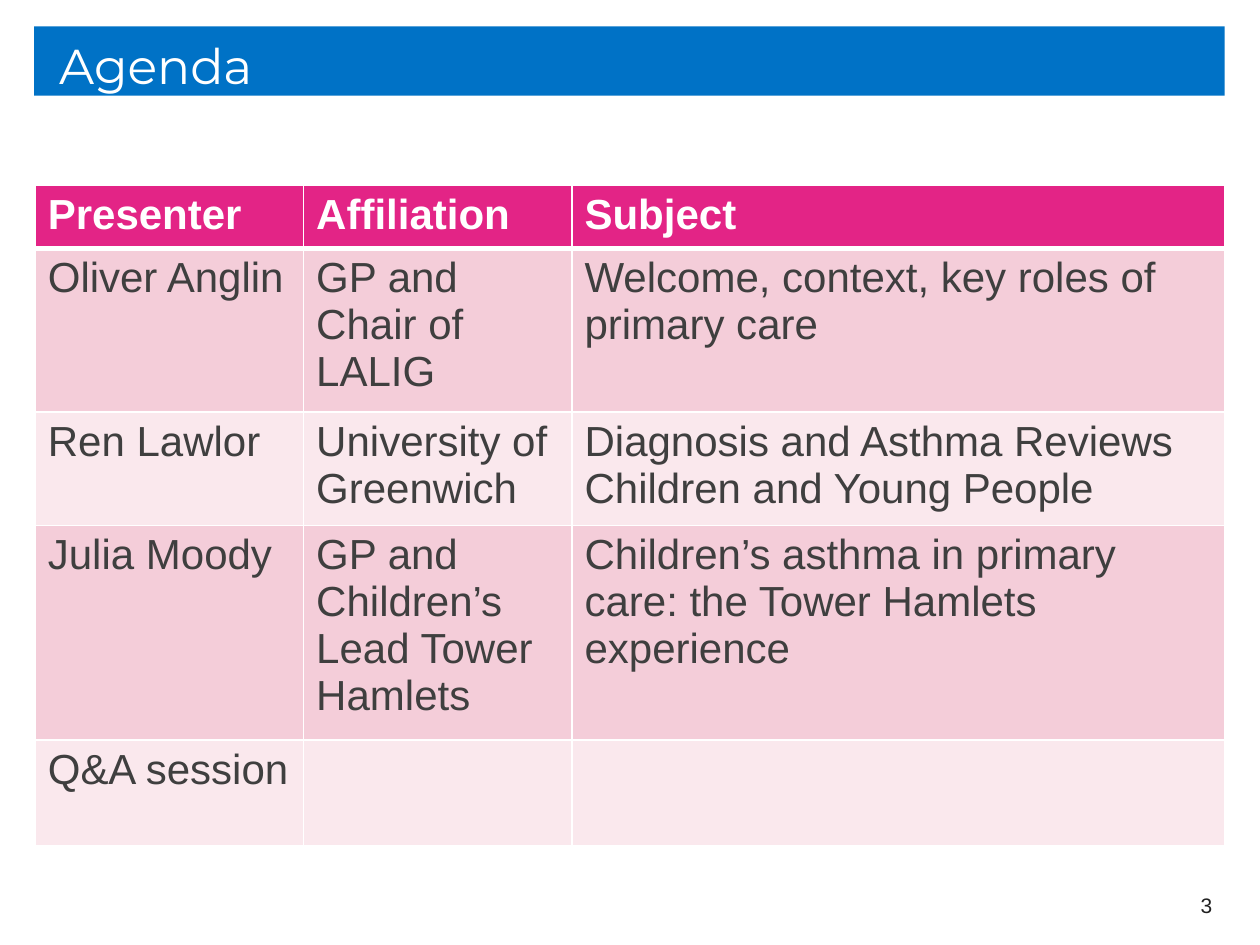
from dataclasses import dataclass

from lxml.etree import SubElement
from pptx import Presentation
from pptx.dml.color import RGBColor
from pptx.enum.shapes import MSO_SHAPE
from pptx.enum.text import MSO_ANCHOR, PP_ALIGN
from pptx.oxml.ns import qn
from pptx.util import Inches, Pt

WHITE = RGBColor(0xFF, 0xFF, 0xFF)
BLUE = RGBColor(0x00, 0x72, 0xC6)
MAGENTA = RGBColor(0xE3, 0x24, 0x86)
PINK = RGBColor(0xF4, 0xCD, 0xD9)
PALE_PINK = RGBColor(0xFA, 0xE8, 0xED)
GREY = RGBColor(0x3F, 0x3F, 0x3F)
BLACK = RGBColor(0x20, 0x20, 0x20)


@dataclass
class AgendaItem:
    presenter: str
    affiliation: str
    subject: str
    height: float


HEADER = AgendaItem("Presenter", "Affiliation", "Subject", 0.47)
ITEMS = [
    AgendaItem("Oliver Anglin", "GP and Chair of LALIG",
               "Welcome, context, key roles of primary care", 1.21),
    AgendaItem("Ren Lawlor", "University of Greenwich",
               "Diagnosis and Asthma Reviews Children and Young People", 0.84),
    AgendaItem("Julia Moody", "GP and Children’s Lead Tower Hamlets",
               "Children’s asthma in primary care: the Tower Hamlets experience", 1.59),
    AgendaItem("Q&A session", "", "", 0.84),
]
COLUMN_WIDTHS = (2.13, 2.13, 5.18)


def write(tf, text: str, *, size: float, color: RGBColor, font: str = "Arial",
          bold: bool = False, align: PP_ALIGN = PP_ALIGN.LEFT) -> None:
    """Put one formatted paragraph in a text frame."""
    tf.word_wrap = True
    p = tf.paragraphs[0]
    p.alignment = align
    p.font.size = Pt(size)
    if not text:
        # An empty cell keeps its text size in the end mark
        SubElement(p._p, qn("a:endParaRPr"), sz=str(size * 100))
        return
    r = p.add_run()
    r.text = text
    r.font.name = font
    r.font.size = Pt(size)
    r.font.bold = bold
    r.font.color.rgb = color


def set_borders(cell, bottom: float = 1) -> None:
    """Draw white cell borders; they must come before the fill."""
    tc_pr = cell._tc.get_or_add_tcPr()
    for side, width in (("L", 1), ("R", 1), ("T", 1), ("B", bottom)):
        ln = SubElement(tc_pr, qn(f"a:ln{side}"), w=str(Pt(width)))
        fill = SubElement(ln, qn("a:solidFill"))
        SubElement(fill, qn("a:srgbClr"), val=str(WHITE))


def fill_row(table, index: int, item: AgendaItem, fill: RGBColor, header: bool) -> None:
    table.rows[index].height = Inches(item.height)
    texts = (item.presenter, item.affiliation, item.subject)
    for column, text in enumerate(texts):
        cell = table.cell(index, column)
        set_borders(cell, bottom=3 if header else 1)
        cell.fill.solid()
        cell.fill.fore_color.rgb = fill
        write(cell.text_frame, text, size=24, bold=header,
              color=WHITE if header else GREY)


def add_title(s, text: str) -> None:
    sp = s.shapes.add_shape(MSO_SHAPE.RECTANGLE, Inches(0.27), Inches(0.21),
                            Inches(9.45), Inches(0.55))
    sp.shadow.inherit = False
    sp.fill.solid()
    sp.fill.fore_color.rgb = BLUE
    sp.line.fill.background()
    tf = sp.text_frame
    tf.vertical_anchor = MSO_ANCHOR.TOP
    tf.margin_left = Inches(0.2)
    tf.margin_top = Inches(0.07)
    tf.margin_bottom = 0
    write(tf, text, size=28, color=WHITE, font="Montserrat")


def add_agenda(s) -> None:
    rows = [HEADER, *ITEMS]
    height = sum(item.height for item in rows)
    table = s.shapes.add_table(len(rows), len(COLUMN_WIDTHS), Inches(0.28), Inches(1.47),
                               Inches(sum(COLUMN_WIDTHS)), Inches(height)).table
    for column, width in zip(table.columns, COLUMN_WIDTHS):
        column.width = Inches(width)
    for i, item in enumerate(rows):
        band = PINK if i % 2 else PALE_PINK
        fill_row(table, i, item, MAGENTA if i == 0 else band, header=i == 0)


def add_page_number(s, number: int) -> None:
    tf = s.shapes.add_textbox(Inches(7.39), Inches(6.98),
                              Inches(2.33), Inches(0.4)).text_frame
    tf.vertical_anchor = MSO_ANCHOR.MIDDLE
    write(tf, str(number), size=12, color=BLACK, align=PP_ALIGN.RIGHT)


def main() -> None:
    prs = Presentation()
    prs.slide_width, prs.slide_height = Inches(10), Inches(7.5)
    s = prs.slides.add_slide(prs.slide_layouts[6])
    add_title(s, "Agenda")
    add_page_number(s, 3)
    add_agenda(s)
    prs.save("out.pptx")


if __name__ == "__main__":
    main()
